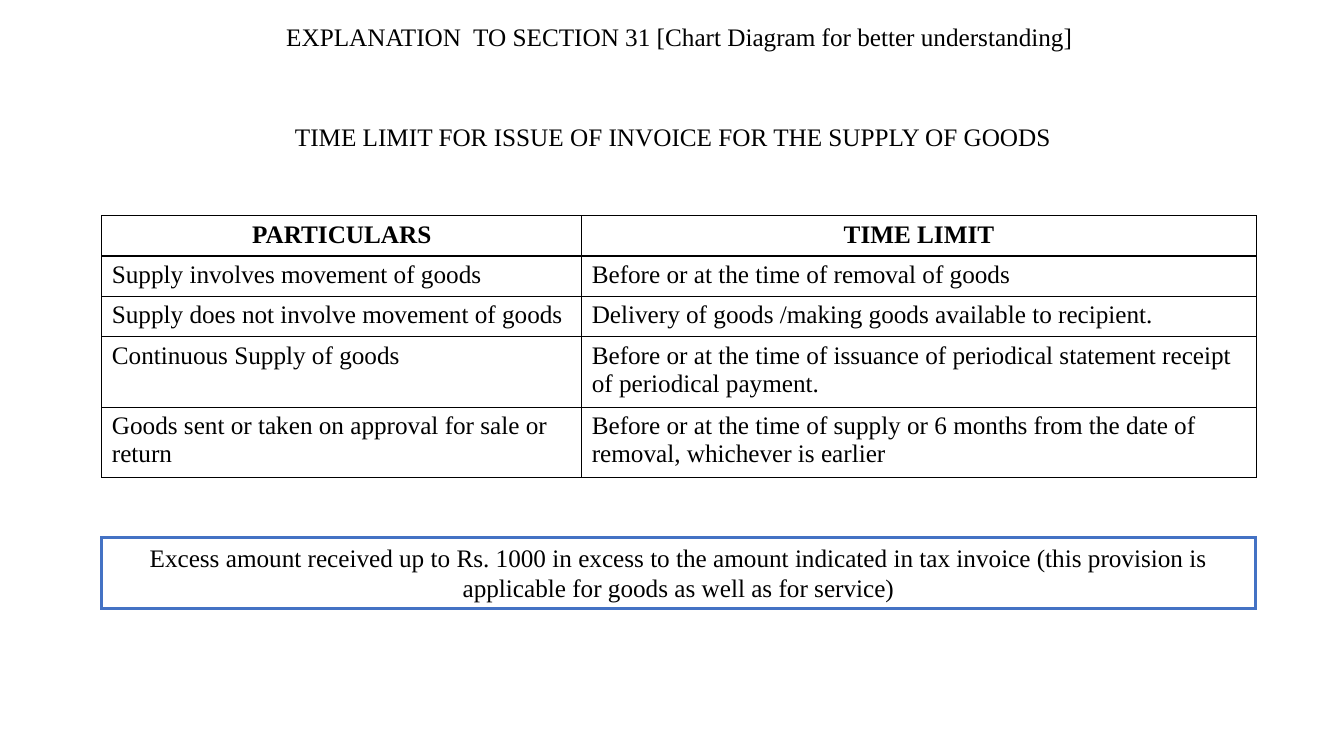
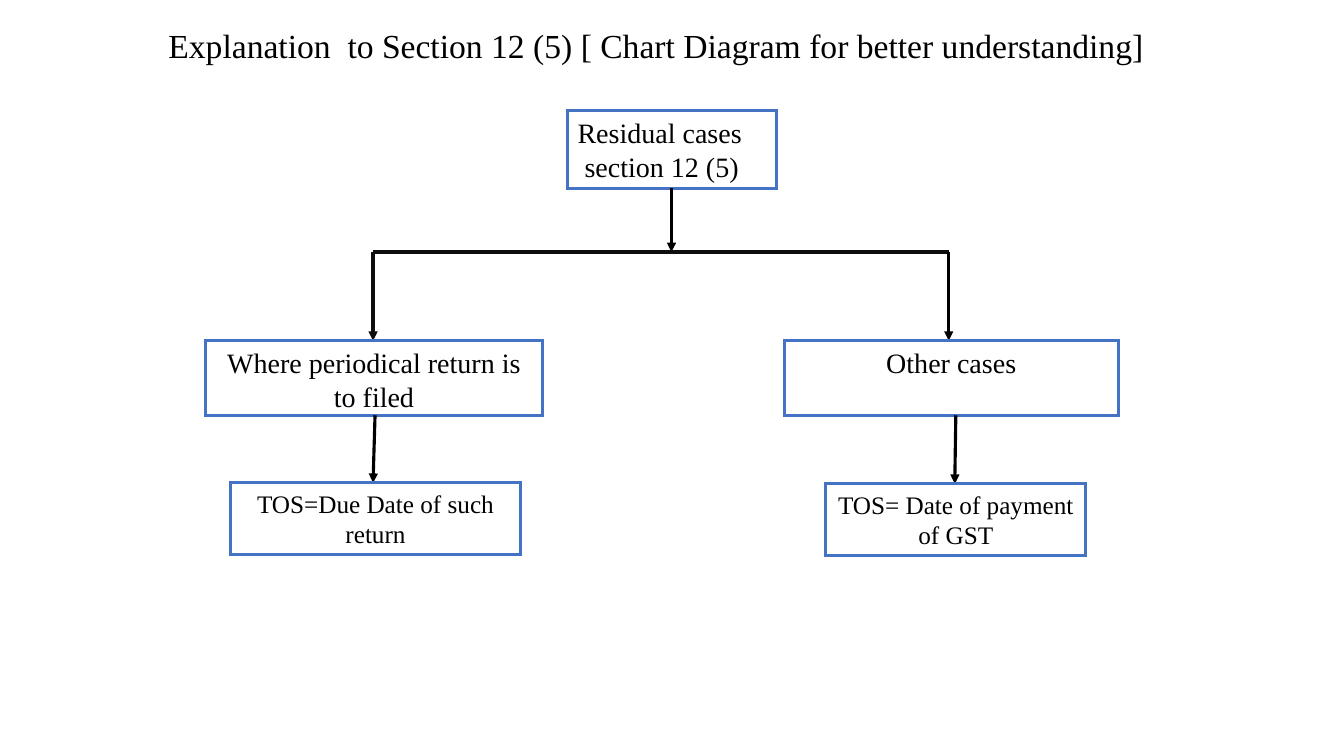
from lxml import etree
from pptx import Presentation, util as u
from pptx.dml.color import RGBColor
from pptx.enum import shapes, text
from pptx.oxml import ns

PX = 9144
FONT = "Times New Roman"
COLORS = {"ink": "000000", "soft": "0D0D0D", "paper": "FFFFFF", "edge": "4472C4"}
CENTER, LEFT = text.PP_ALIGN.CENTER, text.PP_ALIGN.LEFT
FRAME = {"word_wrap": True, "vertical_anchor": text.MSO_ANCHOR.TOP,
         "auto_size": text.MSO_AUTO_SIZE.NONE,
         "margin_left": 10 * PX, "margin_right": 10 * PX,
         "margin_top": 5 * PX, "margin_bottom": 5 * PX}

LIMITS = [
    ("PARTICULARS", "TIME LIMIT"),
    ("Supply involves movement of goods", "Before or at the time of removal of goods"),
    ("Supply does not involve movement of goods",
     "Delivery of goods /making goods available to recipient."),
    ("Continuous Supply of goods",
     "Before or at the time of issuance of periodical statement receipt "
     "of periodical payment."),
    ("Goods sent or taken on approval for sale or return",
     "Before or at the time of supply or 6 months from the date of removal, "
     "whichever is earlier"),
]

BRANCHES = [
    {"case": "Where periodical return is to filed", "case_box": (0, 228, 334, 74),
     "result": "TOS=Due Date of such return", "result_box": (25, 369, 287, 71),
     "drop": 166, "arrow": (168, 166), "color": "soft"},
    {"case": "Other cases", "case_box": (574, 228, 331, 74),
     "result": "TOS= Date of payment of GST", "result_box": (615, 370, 258, 71),
     "drop": 737, "arrow": (744, 743), "color": "ink"},
]


def emu(*lengths):
    """Turn px lengths into EMU."""
    return [u.Emu(n * PX) for n in lengths]


def rgb(name):
    """Look up a named colour."""
    return RGBColor.from_string(COLORS[name])


def write(tf, lines, size, align=CENTER, bold=False):
    """Fill a text frame with one paragraph per line."""
    for i, line in enumerate(lines):
        p = tf.paragraphs[0] if i == 0 else tf.add_paragraph()
        layout = {"alignment": align, "line_spacing": 1.0,
                  "space_before": u.Pt(0), "space_after": u.Pt(0)}
        for key, value in layout.items():
            setattr(p, key, value)
        r = p.add_run()
        r.text = line
        for key, value in {"name": FONT, "size": u.Pt(size), "bold": bold}.items():
            setattr(r.font, key, value)
        r.font.color.rgb = rgb("ink")


def set_frame(tf):
    """Apply the shared wrapping, anchor and insets."""
    for key, value in FRAME.items():
        setattr(tf, key, value)


def add_slide(prs, title, box, size, align):
    """Add a slide with its placed and formatted title."""
    s = prs.slides.add_slide(prs.slide_layouts[5])
    sp = s.shapes.title
    sp.left, sp.top, sp.width, sp.height = emu(*box)
    set_frame(sp.text_frame)
    write(sp.text_frame, [title], size, align)
    return s


def add_heading(s, heading, box):
    """Add a centred heading line."""
    sp = s.shapes.add_textbox(*emu(*box))
    set_frame(sp.text_frame)
    write(sp.text_frame, [heading], 18)


def add_box(s, lines, box, size, align=CENTER):
    """Add a white box with a blue, square-cornered outline."""
    sp = s.shapes.add_shape(shapes.MSO_SHAPE.RECTANGLE, *emu(*box))
    sp.shadow.inherit = False
    sp.fill.solid()
    sp.fill.fore_color.rgb = rgb("paper")
    sp.line.color.rgb = rgb("edge")
    sp.line.width = u.Pt(2.25)
    etree.SubElement(sp.line._get_or_add_ln(), ns.qn("a:miter"), lim="800000")
    set_frame(sp.text_frame)
    write(sp.text_frame, lines, size, align)


def add_line(s, x1, y1, x2, y2, color="ink", arrow=True):
    """Add a straight line, with an arrowhead at its end if asked."""
    sp = s.shapes.add_connector(shapes.MSO_CONNECTOR.STRAIGHT, *emu(x1, y1, x2, y2))
    sp.line.color.rgb = rgb(color)
    sp.line.width = u.Pt(2.25)
    if arrow:
        etree.SubElement(sp.line._get_or_add_ln(), ns.qn("a:tailEnd"), type="triangle")
    etree.SubElement(sp._element.spPr, ns.qn("a:effectLst"))


def set_borders(cell):
    """Draw a thin line on all four sides of a cell."""
    tc_pr = cell._tc.get_or_add_tcPr()
    for i, side in enumerate(("lnL", "lnR", "lnT", "lnB")):
        ln = etree.Element(ns.qn(f"a:{side}"), w=str(u.Pt(1)))
        fill = etree.SubElement(ln, ns.qn("a:solidFill"))
        etree.SubElement(fill, ns.qn("a:srgbClr"), val=COLORS["ink"])
        tc_pr.insert(i, ln)


def add_limits(s, x, y, widths, heights):
    """Add the bordered table of time limits."""
    box = emu(x, y, sum(widths), sum(heights))
    table = s.shapes.add_table(len(LIMITS), len(widths), *box).table
    table.first_row = table.horz_banding = False
    for column, width in zip(table.columns, emu(*widths)):
        column.width = width
    for i, (row, height) in enumerate(zip(table.rows, emu(*heights))):
        row.height = height
        for cell, content in zip(row.cells, LIMITS[i]):
            cell.fill.solid()
            cell.fill.fore_color.rgb = rgb("paper")
            write(cell.text_frame, [content], 18, LEFT if i else CENTER, bold=i == 0)
            set_borders(cell)


def add_flow(s, x, y):
    """Add the decision tree with its top left corner at x, y."""
    def at(box):
        return (x + box[0], y + box[1], *box[2:])

    root, bar = (359, 0, 207, 77), y + 140
    middle = x + root[0] + root[2] // 2
    add_box(s, ["Residual cases", " section 12 (5)"], at(root), 20, LEFT)
    add_line(s, middle, y + root[3], middle, bar)
    ends = [x + b["drop"] for b in BRANCHES]
    add_line(s, ends[0], bar, ends[1], bar, "soft", arrow=False)
    for b, drop in zip(BRANCHES, ends):
        case, result = at(b["case_box"]), at(b["result_box"])
        start, end = b["arrow"]
        add_line(s, drop, bar, drop, case[1], b["color"])
        add_box(s, [b["case"]], case, 20)
        add_line(s, x + start, case[1] + case[3], x + end, result[1])
        add_box(s, [b["result"]], result, 18)


def goods_slide(prs):
    """Build the slide on invoice time limits for goods."""
    s = add_slide(prs, "EXPLANATION  TO SECTION 31 [Chart Diagram for better understanding]",
                  (183, 16, 982, 40), 18, CENTER)
    add_heading(s, "TIME LIMIT FOR ISSUE OF INVOICE FOR THE SUPPLY OF GOODS",
                (101, 115, 1133, 40))
    add_limits(s, 101, 214, (476, 669), (40, 40, 40, 70, 70))
    add_box(s, ["Excess amount received up to Rs. 1000 in excess to the amount indicated in "
                "tax invoice (this provision is applicable for goods as well as for service)"],
            (101, 533, 1144, 71), 18)


def residual_slide(prs):
    """Build the slide on residual cases."""
    s = add_slide(prs, "Explanation  to Section 12 (5) [ Chart Diagram for better understanding]",
                  (157, 20, 1019, 50), 24, LEFT)
    add_flow(s, 204, 110)


def main():
    """Build and save the presentation."""
    prs = Presentation()
    prs.slide_width, prs.slide_height = emu(1333, 750)
    goods_slide(prs)
    residual_slide(prs)
    prs.save("out.pptx")


if __name__ == "__main__":
    main()
